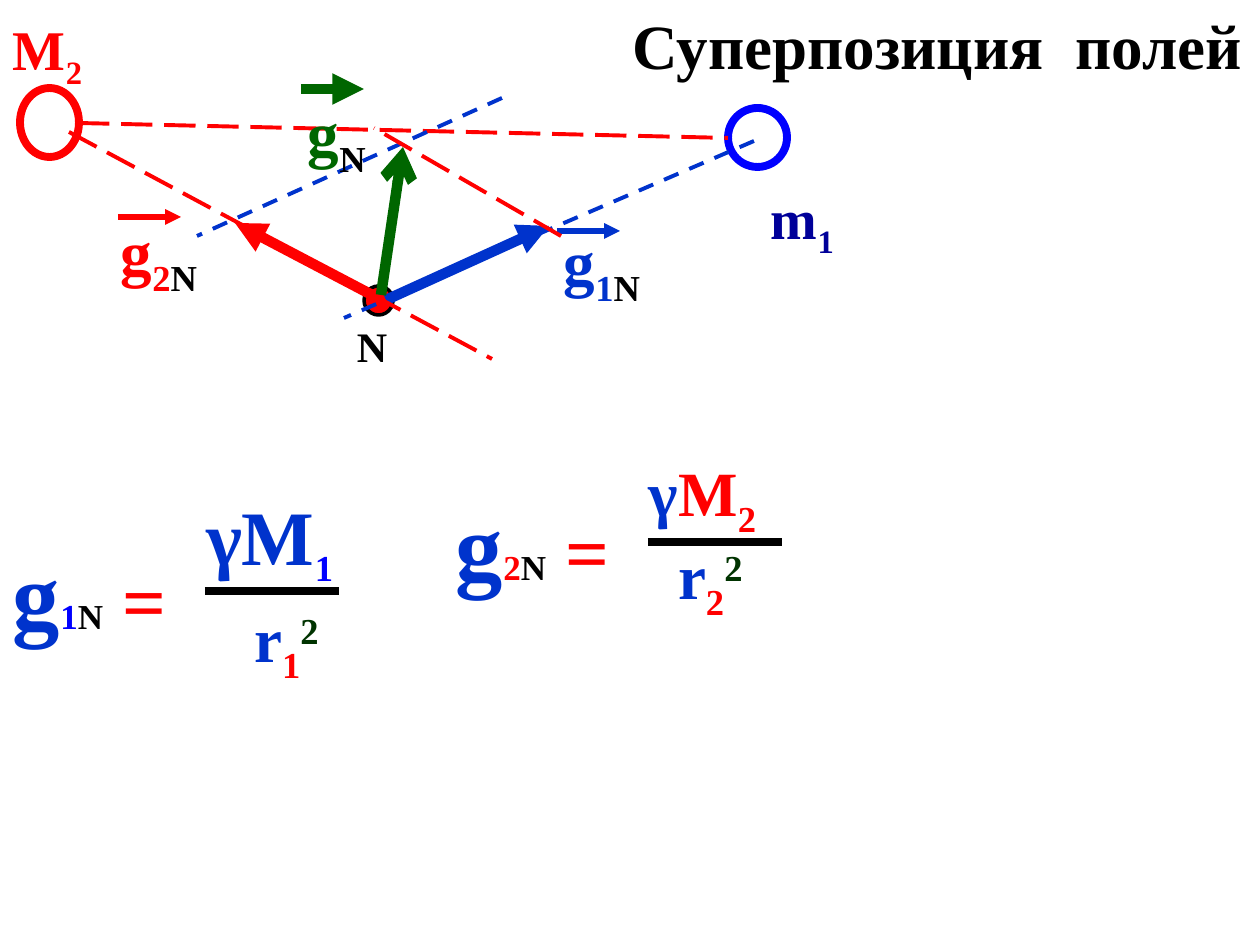
from lxml.etree import SubElement
from pptx import Presentation
from pptx.dml.color import RGBColor
from pptx.enum.dml import MSO_LINE
from pptx.enum.shapes import MSO_CONNECTOR, MSO_SHAPE
from pptx.enum.text import MSO_ANCHOR, MSO_AUTO_SIZE, PP_ALIGN
from pptx.oxml.ns import qn
from pptx.util import Emu, Pt

PX_PER_INCH = 126
FONT = "Times New Roman"
RED, BLUE, PURE_BLUE, NAVY = "FF0000", "0033CC", "0000FF", "000099"
GREEN, DARK_GREEN, BLACK = "006600", "003300", "000000"
SUB, SUPER = -25, 30


def px(n):
    """Turn whole pixels into EMU."""
    return Emu(round(n * 914400 / PX_PER_INCH))


def rgb(color):
    """Turn a hex string into a colour."""
    return RGBColor.from_string(color)


def write(tf, runs, wrap=False, left=13, top=6):
    """Fill a text frame with (text, size, colour, baseline) runs."""
    tf.auto_size = MSO_AUTO_SIZE.NONE
    tf.word_wrap = wrap
    tf.vertical_anchor = MSO_ANCHOR.TOP
    tf.margin_left, tf.margin_top = px(left), px(top)
    p = tf.paragraphs[0]
    p.alignment = PP_ALIGN.LEFT
    p.font.name, p.font.bold = FONT, True
    for text, size, color, baseline in runs:
        r = p.add_run()
        r.text = text
        r.font.name, r.font.bold, r.font.size = FONT, True, Pt(size)
        r.font.color.rgb = rgb(color)
        if baseline:
            r._r.get_or_add_rPr().set("baseline", str(baseline * 1000))


def add_label(shapes, box, runs, **layout):
    """Add a text box made of coloured runs."""
    write(shapes.add_textbox(*map(px, box)).text_frame, runs, **layout)


def add_body(shapes, box, color, width, fill=None):
    """Add a round body, hollow unless a fill is given."""
    sp = shapes.add_shape(MSO_SHAPE.OVAL, *map(px, box))
    sp.shadow.inherit = False
    sp.line.color.rgb = rgb(color)
    sp.line.width = Pt(width)
    if fill:
        sp.fill.solid()
        sp.fill.fore_color.rgb = rgb(fill)
    else:
        sp.fill.background()


def add_line(shapes, start, end, color, width, dash=None, head=None):
    """Add a straight line with an optional dash and arrowhead."""
    line = shapes.add_connector(MSO_CONNECTOR.STRAIGHT, *map(px, start + end))
    line.line.color.rgb = rgb(color)
    line.line.width = Pt(width)
    if dash:
        line.line.dash_style = dash
    if head:
        SubElement(line.line._get_or_add_ln(), qn("a:tailEnd"), type=head)
    SubElement(line._element.spPr, qn("a:effectLst"))


def add_ray(shapes, start, end, color):
    """Add a thin dashed construction line, long-dashed when red."""
    dash = MSO_LINE.LONG_DASH if color == RED else MSO_LINE.DASH
    add_line(shapes, start, end, color, 2.25, dash)


def add_vector_label(s, box, arrow, width, color, runs):
    """Add a symbol g with a vector arrow above it."""
    shapes = s.shapes.add_group_shape().shapes
    x, y = arrow
    add_line(shapes, (x, y), (x + 63, y), color, width, head="triangle")
    add_label(shapes, box, [("g", 36, color, 0)] + runs)


def add_formula(s, x, y, index, index_color, numerator, denominator):
    """Add the fraction formula for one field strength."""
    shapes = s.shapes.add_group_shape().shapes
    add_label(shapes, (x + 159, y + 53, 270, 93), denominator, wrap=True, left=76, top=15)
    add_label(shapes, (x, y, 257, 137),
              [("g", 54, BLUE, 0), (index, 20, index_color, 0),
               ("N", 20, BLACK, 0), (" =", 44, RED, 0)], wrap=True, top=17)
    add_label(shapes, (x + 193, y - 75, 210, 137),
              numerator + [(" ", 60, RED, 0)], wrap=True, top=18)
    add_line(shapes, (x + 205, y + 73), (x + 339, y + 73), BLACK, 4.5)


def main():
    """Build the slide on superposition of fields."""
    prs = Presentation()
    prs.slide_width, prs.slide_height = px(1260), px(945)
    s = prs.slides.add_slide(prs.slide_layouts[5])
    title = s.shapes.title
    title.left, title.top, title.width, title.height = map(px, (620, 0, 640, 89))
    write(title.text_frame, [("Суперпозиция  полей", 36, BLACK, 0)])

    add_body(s.shapes, (20, 88, 59, 69), RED, 4.5)
    add_body(s.shapes, (728, 108, 59, 59), PURE_BLUE, 4.5)
    add_label(s.shapes, (0, 9, 98, 81), [("M", 32, RED, 0), ("2", 32, RED, SUB)])
    add_label(s.shapes, (758, 178, 91, 81), [("m", 32, NAVY, 0), ("1", 32, NAVY, SUB)])
    add_label(s.shapes, (344, 315, 88, 63), [("N", 24, BLACK, 0)])
    add_body(s.shapes, (364, 286, 29, 29), BLACK, 2, RED)

    add_line(s.shapes, (376, 297), (235, 223), RED, 6, head="triangle")
    add_vector_label(s, (108, 207, 129, 89), (118, 217), 3, RED,
                     [("2", 36, RED, SUB), ("N", 36, BLACK, SUB)])
    add_line(s.shapes, (386, 300), (549, 226), BLUE, 6, head="triangle")
    add_vector_label(s, (551, 217, 129, 89), (557, 231), 3, BLUE,
                     [("1", 36, BLUE, SUB), ("N", 36, BLACK, SUB)])

    for start, end, color in (
        ((754, 141), (344, 318), BLUE),
        ((78, 123), (728, 138), RED),
        ((69, 132), (492, 359), RED),
        ((502, 98), (197, 236), BLUE),
        ((561, 236), (374, 128), RED),
    ):
        add_ray(s.shapes, start, end, color)

    add_formula(s, 0, 518, "1", PURE_BLUE,
                [("γM", 44, BLUE, 0), ("1", 36, PURE_BLUE, SUB)],
                [(" ", 44, RED, 0), ("r", 36, BLUE, 0), ("1", 36, RED, SUB),
                 ("2", 36, DARK_GREEN, SUPER)])
    add_formula(s, 443, 469, "2", RED,
                [("γ", 36, BLUE, 0), ("M", 36, RED, 0), ("2", 36, RED, SUB)],
                [("r", 36, BLUE, 0), ("2", 36, RED, SUB), ("2", 36, DARK_GREEN, SUPER)])

    add_line(s.shapes, (381, 295), (403, 147), GREEN, 6, head="arrow")
    add_vector_label(s, (295, 88, 98, 89), (301, 89), 6, GREEN, [("N", 36, BLACK, SUB)])
    prs.save("out.pptx")


if __name__ == "__main__":
    main()
